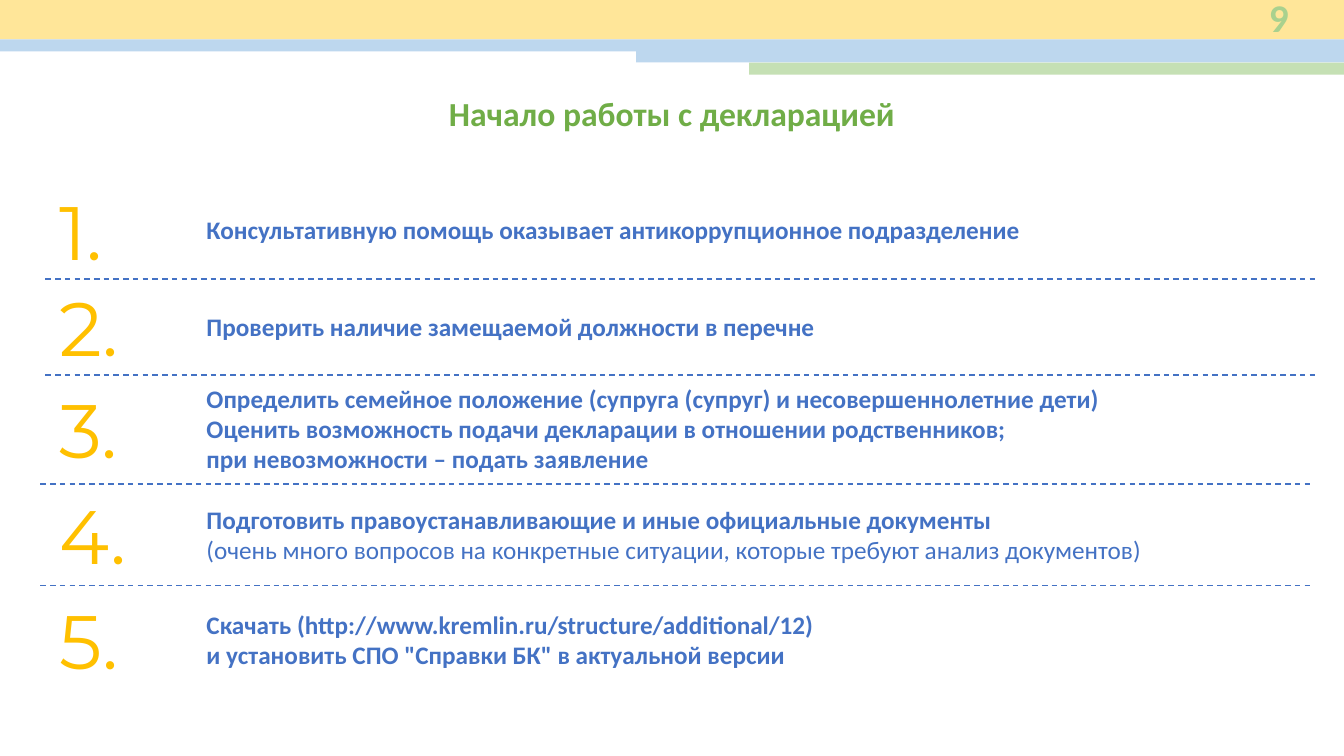
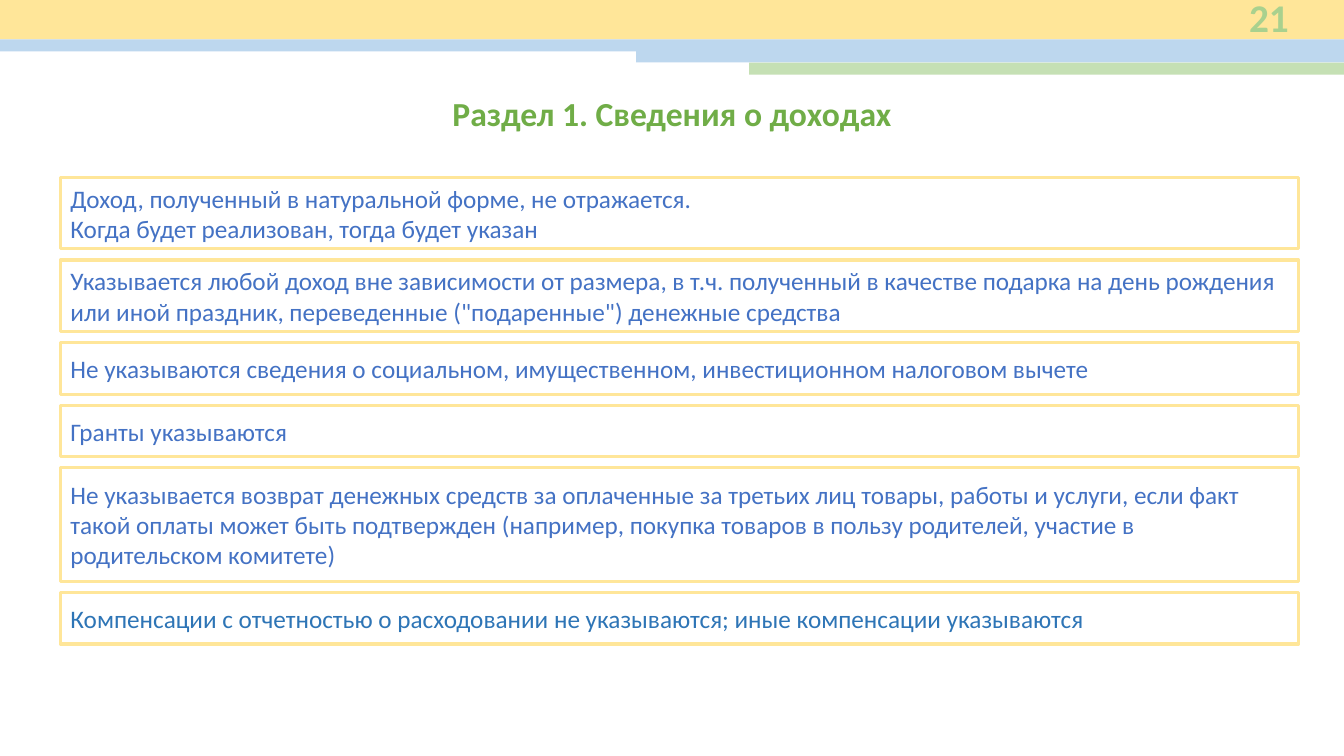
"""Build two slides on preparing an income declaration."""
from lxml import etree
from pptx import Presentation
from pptx import util as u
from pptx.dml.color import RGBColor
from pptx.enum import dml, shapes, text
from pptx.oxml import ns

YELLOW = RGBColor(0xFF, 0xE6, 0x99)
LIGHT_BLUE = RGBColor(0xBD, 0xD7, 0xEE)
LIGHT_GREEN = RGBColor(0xC5, 0xE0, 0xB4)
PAGE_GREEN = RGBColor(0xA9, 0xD1, 0x8E)
TITLE_GREEN = RGBColor(0x70, 0xAD, 0x47)
BLUE = RGBColor(0x44, 0x72, 0xC4)
DEEP_BLUE = RGBColor(0x2E, 0x75, 0xB6)
GOLD = RGBColor(0xFF, 0xC0, 0x00)

TITLE = {"name": "Calibri", "size": u.Pt(24), "bold": True, "color": TITLE_GREEN}
PAGE = {"name": "Calibri", "size": u.Pt(28), "bold": True, "color": PAGE_GREEN}
NUMBER = {"name": "Montserrat", "size": u.Pt(54), "bold": False, "color": GOLD}
BODY = {"name": "Calibri", "size": u.Pt(18), "bold": False, "color": BLUE}
STRONG = {**BODY, "bold": True}

BANDS = [
    (0, 0, 13.33, 0.39, YELLOW),
    (0, 0.39, 13.33, 0.12, LIGHT_BLUE),
    (6.31, 0.5, 7.02, 0.12, LIGHT_BLUE),
    (7.43, 0.62, 5.9, 0.12, LIGHT_GREEN),
]
PAGES = [("Начало работы с декларацией", "9"), ("Раздел 1. Сведения о доходах", "21")]

STEPS = [
    (2.28, [("Консультативную помощь оказывает антикоррупционное подразделение", STRONG)]),
    (3.24, [("Проверить наличие замещаемой должности в перечне", STRONG)]),
    (4.25, [
        ("Определить семейное положение (супруга (супруг) и несовершеннолетние дети)", STRONG),
        ("Оценить возможность подачи декларации в отношении родственников;", STRONG),
        ("при невозможности – подать заявление", STRONG),
    ]),
    (5.3, [
        ("Подготовить правоустанавливающие и иные официальные документы", STRONG),
        ("(очень много вопросов на конкретные ситуации, которые требуют анализ документов)", BODY),
    ]),
    (6.34, [
        ("Скачать (http://www.kremlin.ru/structure/additional/12)", STRONG),
        ('и установить СПО "Справки БК" в актуальной версии', STRONG),
    ]),
]
DIVIDERS = [(0.45, 2.77), (0.45, 3.72), (0.4, 4.8), (0.4, 5.81)]

RULES = [
    (0.71, [
        ("Доход, полученный в натуральной форме, не отражается.", BODY),
        ("Когда будет реализован, тогда будет указан", BODY),
    ]),
    (0.71, [(
        "Указывается любой доход вне зависимости от размера, в т.ч. полученный в качестве "
        "подарка на день рождения или иной праздник, переведенные (\"подаренные\") "
        "денежные средства", BODY)]),
    (0.51, [(
        "Не указываются сведения о социальном, имущественном, инвестиционном налоговом "
        "вычете", BODY)]),
    (0.51, [("Гранты указываются", BODY)]),
    (1.13, [(
        "Не указывается возврат денежных средств за оплаченные за третьих лиц товары, "
        "работы и услуги, если факт такой оплаты может быть подтвержден (например, "
        "покупка товаров в пользу родителей, участие в родительском комитете)", BODY)]),
    (0.51, [(
        "Компенсации с отчетностью о расходовании не указываются; иные компенсации "
        "указываются", {**BODY, "color": DEEP_BLUE})]),
]
RULE_GAP = 0.11


def write(shape, lines, align=text.PP_ALIGN.LEFT):
    frame = shape.text_frame
    frame.word_wrap = True
    frame.vertical_anchor = text.MSO_ANCHOR.MIDDLE
    for index, (wording, style) in enumerate(lines):
        paragraph = frame.add_paragraph() if index else frame.paragraphs[0]
        paragraph.alignment = align
        run = paragraph.add_run()
        run.text = wording
        for key, value in style.items():
            if key == "color":
                run.font.color.rgb = value
            else:
                setattr(run.font, key, value)


def add_rectangle(slide, left, top, width, height):
    shape = slide.shapes.add_shape(
        shapes.MSO_SHAPE.RECTANGLE,
        u.Inches(left), u.Inches(top), u.Inches(width), u.Inches(height))
    shape.shadow.inherit = False
    return shape


presentation = Presentation()
presentation.slide_width = u.Inches(13.33)
presentation.slide_height = u.Inches(7.5)

slides = []
for title, page_number in PAGES:
    slide = presentation.slides.add_slide(presentation.slide_layouts[6])
    slides.append(slide)
    for left, top, width, height, color in BANDS:
        band = add_rectangle(slide, left, top, width, height)
        band.fill.solid()
        band.fill.fore_color.rgb = color
        band.line.fill.background()
    title_box = slide.shapes.add_textbox(
        u.Inches(0.6), u.Inches(0.87), u.Inches(12.13), u.Inches(0.5))
    write(title_box, [(title, TITLE)], text.PP_ALIGN.CENTER)
    page_box = slide.shapes.add_textbox(
        u.Inches(11.63), u.Inches(-0.05), u.Inches(1.25), u.Inches(0.44))
    write(page_box, [(page_number, PAGE)], text.PP_ALIGN.RIGHT)

steps_slide, rules_slide = slides

for number, (middle, lines) in enumerate(STEPS, 1):
    for left, width, height, content in (
        (0.49, 1.25, 1.01, [(f"{number}.", NUMBER)]),
        (1.95, 11.06, 0.87, lines),
    ):
        box = steps_slide.shapes.add_textbox(
            u.Inches(left), u.Inches(middle - height / 2), u.Inches(width), u.Inches(height))
        write(box, content)

for left, top in DIVIDERS:
    divider = steps_slide.shapes.add_connector(
        shapes.MSO_CONNECTOR.STRAIGHT,
        u.Inches(left), u.Inches(top), u.Inches(left + 12.61), u.Inches(top))
    divider.line.color.rgb = BLUE
    divider.line.width = u.Pt(1)
    divider.line.dash_style = dml.MSO_LINE.DASH
    etree.SubElement(divider.element.spPr, ns.qn("a:effectLst"))

top = 1.76
for height, lines in RULES:
    rule = add_rectangle(rules_slide, 0.6, top, 12.28, height)
    rule.fill.background()
    rule.line.color.rgb = YELLOW
    rule.line.width = u.Pt(2.25)
    write(rule, lines)
    top += height + RULE_GAP

presentation.save("out.pptx")
